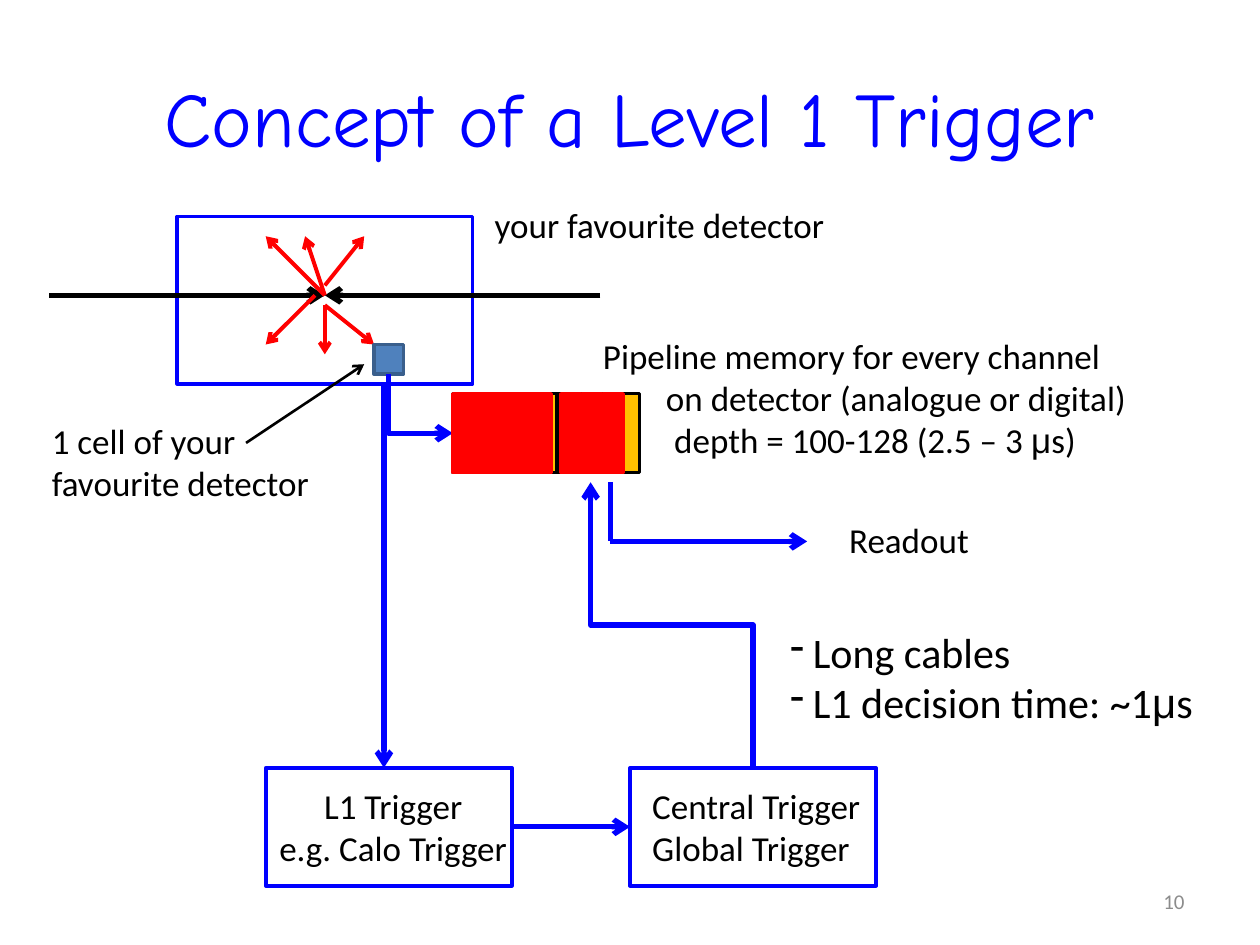
from lxml import etree
from pptx import Presentation
from pptx import util as u
from pptx.dml.color import RGBColor
from pptx.enum import shapes, text
from pptx.oxml.ns import qn

COLORS = {
    "blue": "0000FF", "red": "FF0000", "black": "000000", "white": "FFFFFF",
    "orange": "FFC000", "cell": "4F81BD", "cell edge": "3A5F8C", "grey": "8C8C8C",
}
COLUMNS = 128  # the grid is 128 columns by 96 rows of square cells
UNIT = u.Inches(10) / COLUMNS
ALIGN = text.PP_ALIGN


def grid(value):
    return u.Emu(round(value * UNIT))


def color(name):
    return RGBColor.from_string(COLORS[name])


def add_box(slide, box, fill, line):
    shape = slide.shapes.add_shape(shapes.MSO_SHAPE.RECTANGLE, *map(grid, box))
    shape.shadow.inherit = False
    shape.fill.solid()
    shape.fill.fore_color.rgb = color(fill)
    shape.line.color.rgb = color(line)
    shape.line.width = u.Pt(2)
    return shape


def add_line(slide, start, end, line="blue", width=3, arrow=True,
             kind=shapes.MSO_CONNECTOR.STRAIGHT):
    connector = slide.shapes.add_connector(kind, *map(grid, (*start, *end)))
    connector.line.color.rgb = color(line)
    connector.line.width = u.Pt(width)
    properties = connector._element.spPr
    if arrow:
        outline = properties.find(qn("a:ln"))
        etree.SubElement(outline, qn("a:tailEnd"), type="arrow")
    etree.SubElement(properties, qn("a:effectLst"))
    return connector


def add_elbow(slide, start, end, preset):
    """Bent arrow that leaves its start vertically, turned by 270 degrees."""
    (x1, y1), (x2, y2) = start, end
    width, height = abs(y2 - y1), abs(x2 - x1)
    left, top = (x1 + x2 - width) / 2, (y1 + y2 - height) / 2
    connector = add_line(slide, (left, top), (left + width, top + height),
                         kind=shapes.MSO_CONNECTOR.ELBOW)
    properties = connector._element.spPr
    properties.find(qn("a:prstGeom")).set("prst", preset)
    transform = properties.find(qn("a:xfrm"))
    transform.set("rot", str(270 * 60000))
    if y2 > y1:
        transform.set("flipH", "1")
    if x2 < x1:
        transform.set("flipV", "1")


def add_text(slide, box, lines, size=20, font="Calibri", ink="black",
             align=ALIGN.LEFT, middle=False, wrap=False, indents=(), bullet=None):
    """Text box with one paragraph a line; indents are in points."""
    frame = slide.shapes.add_textbox(*map(grid, box)).text_frame
    frame.word_wrap = wrap
    if middle:
        frame.vertical_anchor = text.MSO_ANCHOR.MIDDLE
    for index, line in enumerate(lines):
        paragraph = frame.paragraphs[0] if index == 0 else frame.add_paragraph()
        paragraph.alignment = align
        properties = paragraph._p.get_or_add_pPr()
        if indents:
            properties.set("marL", str(u.Pt(indents[index])))
        if bullet:
            properties.set("indent", str(-u.Pt(indents[index])))
            etree.SubElement(properties, qn("a:buChar"), char=bullet)
        before, mu, after = line.partition("μ")
        for part in filter(None, (before, mu, after)):
            run = paragraph.add_run()
            run.text = part
            run.font.size = u.Pt(size)
            run.font.name = "Arial" if part == "μ" else font
            run.font.color.rgb = color(ink)


def add_title(slide, box):
    add_text(slide, box, ["Concept of a Level 1 Trigger"], size=44, font="Comic Neue",
             ink="blue", align=ALIGN.CENTER, middle=True, wrap=True)


def add_detector(slide, box):
    """Detector with two beams, the tracks of a collision and one hit cell."""
    left, top, width, height = box
    add_box(slide, box, "white", "blue")
    x, y = left + width / 2, top + 8
    for side in (-28, 28):
        add_line(slide, (x + side, y), (x, y), "black")
    tracks = [((0, 0), (-6, -6)), ((0, 0), (-2, -6)), ((0, -1), (4, -6)),
              ((-1, 0), (-6, 5)), ((0, 1), (0, 6)), ((0, 1), (5, 5))]
    for (dx1, dy1), (dx2, dy2) in tracks:
        add_line(slide, (x + dx1, y + dy1), (x + dx2, y + dy2), "red", 2.25)
    add_box(slide, (x + 5, y + 5, 3, 3), "cell", "cell edge")
    add_text(slide, (left + width + 1, top - 2, 36.4, 5.6), ["your favourite detector"])
    add_text(slide, (left - 14, top + 20, 29, 9.9), ["1 cell of your", "favourite detector"])
    add_line(slide, (left + 7, top + 23), (left + 19, top + 15), "black", 1.5)


def add_pipeline(slide, box):
    """Pipeline memory: divided into slots, with two runs of filled ones."""
    left, top, width, height = box
    slot, step = 2, 2.14
    add_box(slide, box, "orange", "black")
    for index in range(8):
        x = left + slot + index * step
        add_line(slide, (x, top), (x, top + height), "black", 2.25, arrow=False)
    filled = [index * slot for index in range(5)] + [11 + index * step for index in range(3)]
    for offset in filled:
        add_box(slide, (left + offset, top, slot, height), "red", "red")
    add_text(slide, (left + 14, top - 6.6, 56.2, 14.2),
             ["Pipeline memory for every channel",
              "on detector (analogue or digital)",
              "depth = 100-128 (2.5 – 3 μs)"], indents=(0, 36, 40.7))


def add_readout(slide, box):
    left, top, width, height = box
    corner = (left, top + height)
    add_line(slide, (left, top), corner, arrow=False)
    add_line(slide, corner, (left + width, top + height))
    add_text(slide, (left + width + 3, top + height - 3, 14.8, 5.6), ["Readout"])


def add_trigger(slide, box, lines, text_left, text_width, align):
    left, top, width, height = box
    add_box(slide, box, "white", "blue")
    add_text(slide, (left + text_left, top + 1.1, text_width, 9.9), lines, align=align)


def add_latency_notes(slide, box):
    add_text(slide, box, ["Long cables", "L1 decision time: ~1μs"],
             size=24, indents=(13, 13), bullet="-")


def add_page_number(slide, box):
    add_text(slide, box, ["10"], size=12, ink="grey", align=ALIGN.RIGHT,
             middle=True, wrap=True)


def main():
    presentation = Presentation()
    presentation.slide_width, presentation.slide_height = u.Inches(10), u.Inches(7.5)
    slide = presentation.slides.add_slide(presentation.slide_layouts[6])

    add_title(slide, (6.4, 3.84, 115.2, 16))
    add_detector(slide, (18, 22, 30, 17))
    add_line(slide, (39, 39), (39, 78))
    add_elbow(slide, (39.5, 38), (46, 44), "bentConnector2")
    add_pipeline(slide, (46, 40, 19, 8))
    add_trigger(slide, (27, 78, 25, 12), ["L1 Trigger", "e.g. Calo Trigger"],
                0, 25.9, ALIGN.CENTER)
    add_trigger(slide, (64, 78, 25, 12), ["Central Trigger", "Global Trigger"],
                1, 23.9, ALIGN.LEFT)
    add_line(slide, (52, 84), (64, 84))
    add_elbow(slide, (76.5, 78), (60, 49), "bentConnector3")
    add_readout(slide, (62, 49, 20, 6))
    add_latency_notes(slide, (79, 63, 43.8, 11.6))
    add_page_number(slide, (91.8, 89, 29.8, 5.1))

    presentation.save("out.pptx")


if __name__ == "__main__":
    main()
